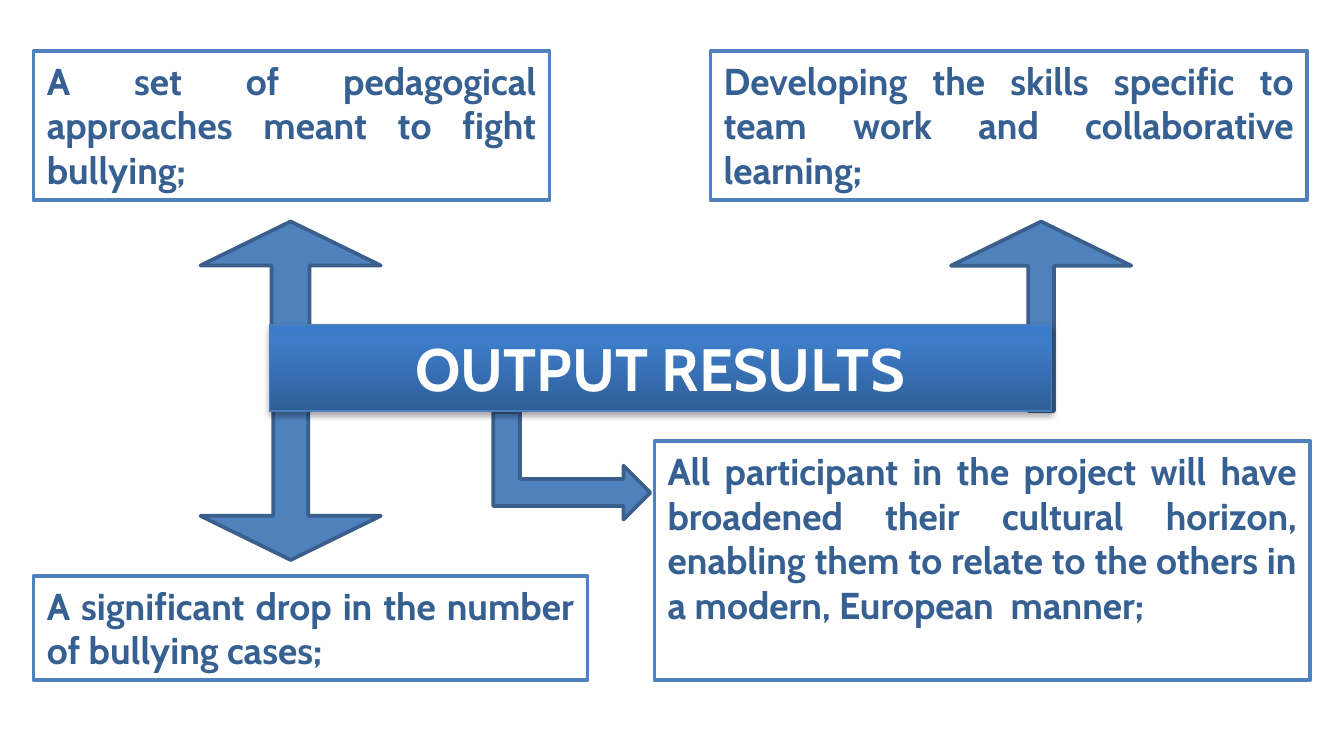
from copy import deepcopy
from dataclasses import dataclass

from pptx import Presentation
from pptx.dml.color import RGBColor
from pptx.enum.shapes import MSO_SHAPE as Preset
from pptx.enum.text import MSO_ANCHOR as Anchor
from pptx.enum.text import MSO_AUTO_SIZE as AutoSize
from pptx.enum.text import PP_ALIGN as Align
from pptx.oxml import parse_xml
from pptx.oxml.ns import nsdecls
from pptx.shapes.autoshape import Shape
from pptx.slide import Slide
from pptx.util import Pt


@dataclass(frozen=True)
class Theme:
    font: str = "Cabin"
    body_size: float = 20
    title_size: float = 32
    outline: float = 2
    title_outline: float = 0.75
    white: str = "FFFFFF"
    text: str = "376092"
    accent: str = "4F81BD"
    arrow_line: str = "3A5F8C"
    title_line: str = "4B7EBC"
    gradient: tuple = ((0, "2F5F99"), (0.8, "3D7CC7"), (1, "3A7CCB"))


@dataclass(frozen=True)
class Frame:
    left: float
    top: float
    width: float
    height: float


@dataclass(frozen=True)
class Arrow:
    frame: Frame
    preset: Preset = Preset.UP_ARROW
    rotation: float = 0
    adjustments: tuple[float, ...] = ()


@dataclass(frozen=True)
class Result:
    frame: Frame
    text: str


THEME = Theme()
TITLE_FRAME = Frame(144.25, 174.2, 419, 46.1)
LEFT, TOP = 18, 27.4
ARROW_LEFT, ARROW_TOP, ARROW_WIDTH = 107.4, 118.7, 96.6

ARROWS = (
    Arrow(Frame(ARROW_LEFT, 197, ARROW_WIDTH, 103), rotation=180,
          adjustments=(0.194, 0.245)),
    Arrow(Frame(509.5, ARROW_TOP, ARROW_WIDTH, 101.5),
          adjustments=(0.143, 0.245)),
    Arrow(Frame(ARROW_LEFT, ARROW_TOP, ARROW_WIDTH, 80),
          adjustments=(0.211, 0.295)),
    Arrow(Frame(277.5, 207.4, 57.6, 84.2), Preset.BENT_UP_ARROW, rotation=90),
)

RESULTS = (
    Result(Frame(LEFT, 308.7, 296.7, 55.7),
           "A significant drop in the number of bullying cases;"),
    Result(Frame(LEFT, TOP, 276.5, 80),
           "A set of pedagogical approaches meant to fight bullying;"),
    Result(Frame(380.6, TOP, 319.7, 80),
           "Developing the skills specific to team work and collaborative learning;"),
    Result(Frame(350.6, 236.4, 351.4, 128),
           "All participant in the project will have broadened their cultural horizon, "
           "enabling them to relate to the others in a modern, European  manner;"),
)


def add_shape(slide: Slide, preset: Preset, frame: Frame, fill: str,
              line: str, line_width: float) -> Shape:
    shape = slide.shapes.add_shape(
        preset, Pt(frame.left), Pt(frame.top), Pt(frame.width), Pt(frame.height))
    shape.shadow.inherit = False
    shape.fill.solid()
    shape.fill.fore_color.rgb = RGBColor.from_string(fill)
    shape.line.color.rgb = RGBColor.from_string(line)
    shape.line.width = Pt(line_width)
    return shape


def write_text(shape: Shape, text: str, size: float, color: str,
               alignment: Align, anchor: Anchor) -> None:
    frame_format = {"word_wrap": True, "vertical_anchor": anchor,
                    "auto_size": AutoSize.SHAPE_TO_FIT_TEXT}
    for name, value in frame_format.items():
        setattr(shape.text_frame, name, value)
    paragraph = shape.text_frame.paragraphs[0]
    paragraph.alignment = alignment
    run = paragraph.add_run()
    run.text = text
    font_format = {"name": THEME.font, "size": Pt(size), "bold": True}
    for name, value in font_format.items():
        setattr(run.font, name, value)
    run.font.color.rgb = RGBColor.from_string(color)


def add_arrow(slide: Slide, arrow: Arrow) -> None:
    shape = add_shape(slide, arrow.preset, arrow.frame, THEME.accent,
                      THEME.arrow_line, THEME.outline)
    shape.rotation = arrow.rotation
    for index, value in enumerate(arrow.adjustments):
        shape.adjustments[index] = value


def add_result(slide: Slide, result: Result) -> None:
    shape = add_shape(slide, Preset.RECTANGLE, result.frame, THEME.white,
                      THEME.accent, THEME.outline)
    write_text(shape, result.text, THEME.body_size, THEME.text,
               Align.JUSTIFY, Anchor.TOP)


def add_title(slide: Slide, text: str) -> None:
    shape = add_shape(slide, Preset.RECTANGLE, TITLE_FRAME, THEME.accent,
                      THEME.title_line, THEME.title_outline)
    write_text(shape, text, THEME.title_size, THEME.white,
               Align.CENTER, Anchor.TOP)

    # Gradient running upwards, with one extra stop
    shape.fill.gradient()
    shape.fill.gradient_angle = 90
    stop_list = shape.fill.gradient_stops[0]._gs.getparent()
    stop_list.append(deepcopy(stop_list[-1]))
    for stop, (position, color) in zip(shape.fill.gradient_stops, THEME.gradient):
        stop.position = position
        stop.color.rgb = RGBColor.from_string(color)

    # Soft shadow below the bar
    effects = shape._element.spPr.find(
        "{http://schemas.openxmlformats.org/drawingml/2006/main}effectLst")
    effects.append(parse_xml(
        f'<a:outerShdw {nsdecls("a")} blurRad="{Pt(3.1)}" dist="{Pt(1.8)}" '
        'dir="5400000" rotWithShape="0"><a:srgbClr val="000000">'
        '<a:alpha val="35000"/></a:srgbClr></a:outerShdw>'))


def main() -> None:
    presentation = Presentation()
    presentation.slide_width = Pt(720)
    presentation.slide_height = Pt(405)
    slide = presentation.slides.add_slide(presentation.slide_layouts[6])

    # Arrows lie behind the title bar
    for arrow in ARROWS:
        add_arrow(slide, arrow)
    for result in RESULTS:
        add_result(slide, result)
    add_title(slide, "OUTPUT RESULTS")

    presentation.save("out.pptx")


if __name__ == "__main__":
    main()
